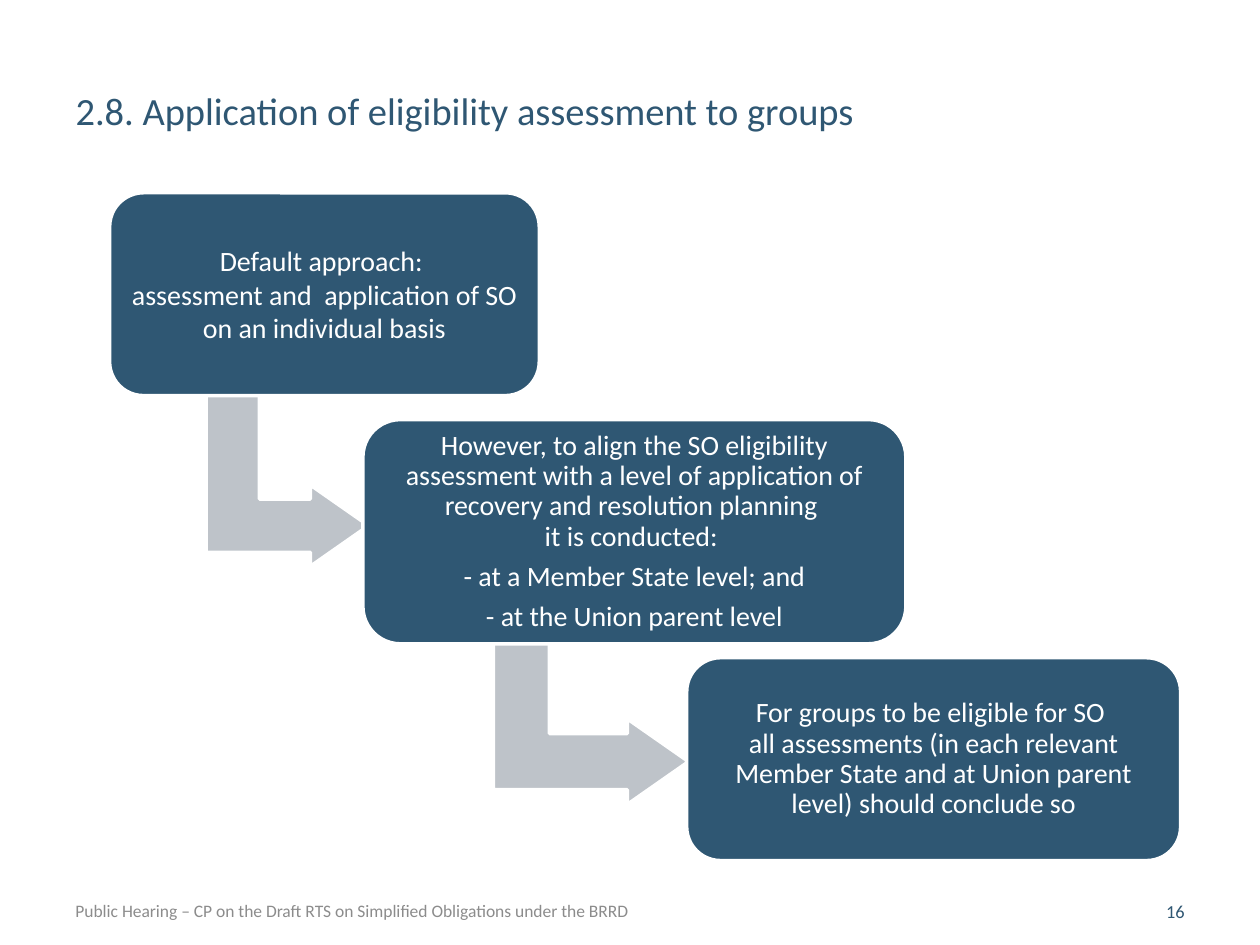
import dataclasses

import pptx
import pptx.dml.color
import pptx.enum.shapes
import pptx.enum.text
import pptx.util

SCALE = 9144


@dataclasses.dataclass(frozen=True)
class Theme:
    font: str = "Calibri"
    navy: str = "2F5773"
    silver: str = "BEC3C9"
    grey: str = "8C8C8C"
    white: str = "FFFFFF"
    title_size: float = 22
    body_size: float = 16
    footer_size: float = 10
    number_size: float = 10.5
    outline: float = 2


THEME = Theme()
ALIGN = pptx.enum.text.PP_ALIGN
ANCHOR = pptx.enum.text.MSO_ANCHOR
SHAPE = pptx.enum.shapes.MSO_SHAPE

STEPS = [
    {
        "box": (87, 153, 341, 161),
        "arrow": (160, 317, 136, 129),
        "spacing": 1.0,
        "paragraphs": [
            ["Default approach: ",
             "assessment and  application of SO on an individual basis"],
        ],
    },
    {
        "box": (288, 333, 431, 178),
        "arrow": (401, 493, 136, 155),
        "spacing": 0.9,
        "paragraphs": [
            ["However, to align the SO eligibility assessment with a level of "
             "application of recovery and resolution planning ",
             "it is conducted: "],
            ["- at a Member State level; and"],
            ["- at the Union parent level"],
        ],
    },
    {
        "box": (545, 522, 392, 161),
        "arrow": None,
        "spacing": 0.9,
        "paragraphs": [
            ["For groups to be eligible for SO ",
             "all assessments (in each relevant Member State and at Union "
             "parent level) should conclude so"],
        ],
    },
]


def px(*lengths):
    return [pptx.util.Emu(length * SCALE) for length in lengths]


def color(value):
    return pptx.dml.color.RGBColor.from_string(value)


def add_span(para, text, size, ink):
    span = para.add_run()
    span.text = text
    span.font.name = THEME.font
    span.font.size = pptx.util.Pt(size)
    span.font.color.rgb = color(ink)


def add_block(shapes, kind, box, fill, adjustments):
    block = shapes.add_shape(kind, *px(*box))
    for index, value in enumerate(adjustments):
        block.adjustments[index] = value
    block.shadow.inherit = False
    block.fill.solid()
    block.fill.fore_color.rgb = color(fill)
    block.line.color.rgb = color(THEME.white)
    block.line.width = pptx.util.Pt(THEME.outline)
    return block


def add_title(page, box, text):
    title = page.shapes.title
    title.left, title.top, title.width, title.height = px(*box)
    frame = title.text_frame
    frame.word_wrap = True
    frame.vertical_anchor = ANCHOR.TOP
    para = frame.paragraphs[0]
    para.alignment = ALIGN.LEFT
    add_span(para, text, THEME.title_size, THEME.navy)


def add_step(shapes, step):
    if step["arrow"]:
        arrow = add_block(shapes, SHAPE.BENT_UP_ARROW, step["arrow"],
                          THEME.silver, (0.328, 0.25, 0.358))
        arrow.rotation = 90
    card = add_block(shapes, SHAPE.ROUNDED_RECTANGLE, step["box"],
                     THEME.navy, (0.167,))
    frame = card.text_frame
    frame.word_wrap = True
    frame.vertical_anchor = ANCHOR.MIDDLE
    frame.margin_left, frame.margin_top = px(7, 7)
    frame.margin_right, frame.margin_bottom = px(7, 7)
    for number, lines in enumerate(step["paragraphs"]):
        para = frame.add_paragraph() if number else frame.paragraphs[0]
        para.alignment = ALIGN.CENTER
        para.line_spacing = step["spacing"]
        para.space_after = pptx.util.Pt(0.35 * THEME.body_size)
        for position, line in enumerate(lines):
            if position:
                para.add_line_break()
            add_span(para, line, THEME.body_size, THEME.white)


def add_staircase(page, steps):
    group = page.shapes.add_group_shape()
    for step in steps:
        add_step(group.shapes, step)


def add_footer(page, box, text, size, ink, alignment):
    frame = page.shapes.add_textbox(*px(*box)).text_frame
    frame.word_wrap = True
    frame.vertical_anchor = ANCHOR.MIDDLE
    para = frame.paragraphs[0]
    para.alignment = alignment
    add_span(para, text, size, ink)


def main():
    deck = pptx.Presentation()
    deck.slide_width, deck.slide_height = px(1000, 750)
    page = deck.slides.add_slide(deck.slide_layouts.get_by_name("Title Only"))
    add_title(page, (50, 64, 729, 61),
              "2.8. Application of eligibility assessment to groups")
    add_staircase(page, STEPS)
    add_footer(page, (50, 711, 538, 24),
               "Public Hearing – CP on the Draft RTS on Simplified Obligations "
               "under the BRRD",
               THEME.footer_size, THEME.grey, ALIGN.LEFT)
    add_footer(page, (865, 711, 85, 24), "16",
               THEME.number_size, THEME.navy, ALIGN.RIGHT)
    deck.save("out.pptx")


if __name__ == "__main__":
    main()
